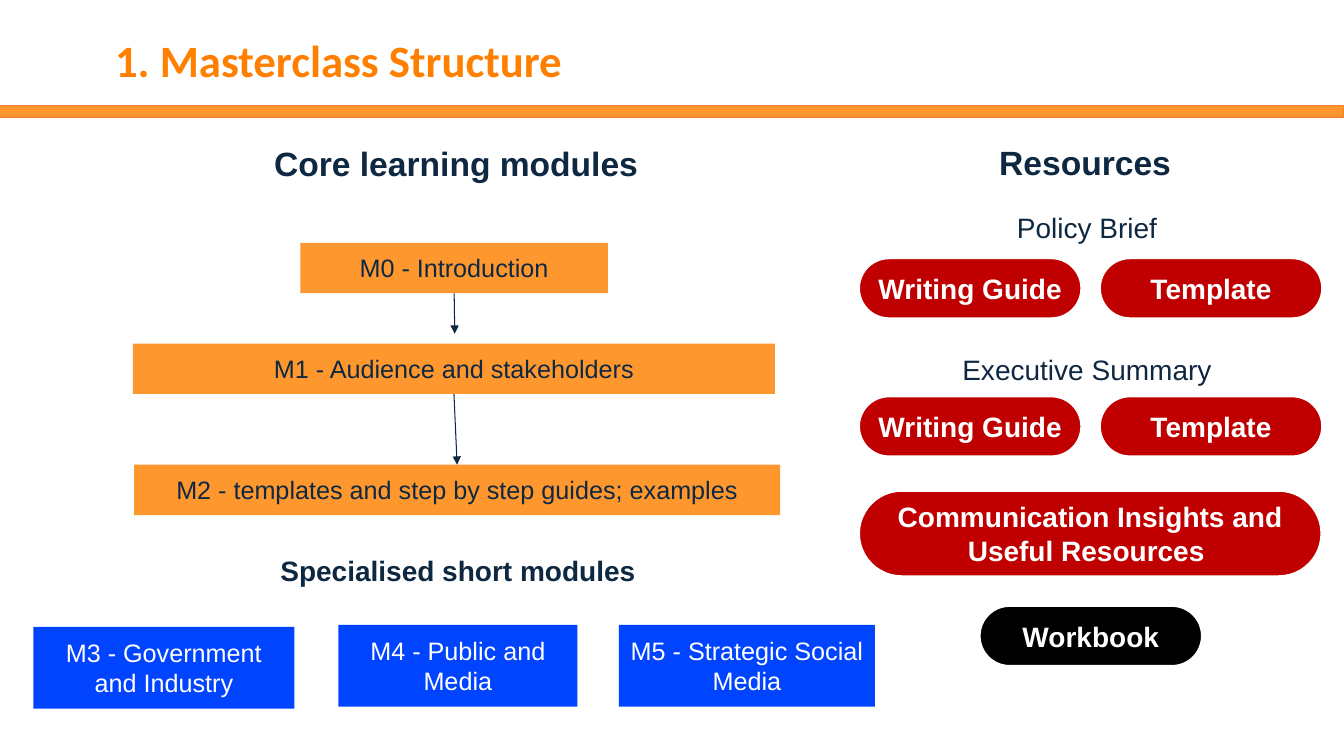
from dataclasses import dataclass

from pptx import Presentation
from pptx.dml.color import RGBColor
from pptx.enum import shapes, text
from pptx.oxml import ns, xmlchemy
from pptx.util import Cm, Pt


@dataclass(frozen=True)
class Theme:
    navy: str = "0E2841"
    orange: str = "FF972F"
    bar_edge: str = "F58234"
    title: str = "FF8001"
    blue: str = "0044FF"
    red: str = "C00000"
    black: str = "000000"
    white: str = "FFFFFF"
    title_font: str = "Calibri"
    font: str = "Arial"
    title_size: int = 32
    head_size: int = 24
    label_size: int = 20
    module_size: int = 18


T = Theme()
RECT = shapes.MSO_SHAPE.RECTANGLE
PILL = shapes.MSO_SHAPE.ROUNDED_RECTANGLE


def write(sp, words, size, color, bold=False, font=T.font, align=text.PP_ALIGN.CENTER):
    tf = sp.text_frame
    tf.word_wrap = True
    p = tf.paragraphs[0]
    p.text = words
    p.alignment = align
    p.font.name = font
    p.font.size = Pt(size)
    p.font.bold = bold
    p.font.color.rgb = RGBColor.from_string(color)
    return tf


def add_block(kind, x, y, w, h, fill, edge=None, edge_width=0.75):
    """Add a filled shape, given in centimetres, with no shadow and equal text margins."""
    sp = s.shapes.add_shape(kind, Cm(x), Cm(y), Cm(w), Cm(h))
    sp.shadow.inherit = False
    sp.fill.solid()
    sp.fill.fore_color.rgb = RGBColor.from_string(fill)
    if edge:
        sp.line.color.rgb = RGBColor.from_string(edge)
        sp.line.width = Pt(edge_width)
    else:
        sp.line.fill.background()
    tf = sp.text_frame
    tf.margin_left = tf.margin_right = tf.margin_top = tf.margin_bottom = Cm(0.25)
    return sp


prs = Presentation()
prs.slide_width, prs.slide_height = Cm(33.87), Cm(19.05)
s = prs.slides.add_slide(prs.slide_layouts[5])

# Title and bar
title = s.shapes.title
title.left, title.top, title.width, title.height = Cm(2.9), Cm(0.86), Cm(26.29), Cm(1.6)
tf = write(title, "1. Masterclass Structure", T.title_size, T.title, True,
           T.title_font, text.PP_ALIGN.LEFT)
tf.margin_left = 0
tf.vertical_anchor = text.MSO_ANCHOR.TOP
tf.auto_size = text.MSO_AUTO_SIZE.NONE
tf.paragraphs[0].line_spacing = 0.9
add_block(RECT, 0, 2.67, 33.87, 0.28, T.orange, T.bar_edge)

# Headings and labels
for words, x, y, h, size, bold in [
    ("Core learning modules", 5.13, 3.48, 1.27, T.head_size, True),
    ("Specialised short modules", 5.18, 13.82, 1.12, T.label_size, True),
    ("Resources", 20.98, 3.45, 1.27, T.head_size, True),
    ("Policy Brief", 21.03, 5.18, 1.12, T.label_size, False),
    ("Executive Summary", 21.03, 8.76, 1.12, T.label_size, False),
]:
    sp = s.shapes.add_textbox(Cm(x), Cm(y), Cm(12.73), Cm(h))
    write(sp, words, size, T.navy, bold).auto_size = text.MSO_AUTO_SIZE.SHAPE_TO_FIT_TEXT

# Modules
modules = []
for words, x, y, w, h, fill, color in [
    ("M0 - Introduction", 7.57, 6.12, 7.75, 1.27, T.orange, T.navy),
    ("M1 - Audience and stakeholders", 3.35, 8.66, 16.18, 1.27, T.orange, T.navy),
    ("M2 - templates and step by step guides; examples",
     3.38, 11.71, 16.28, 1.27, T.orange, T.navy),
    ("M3 - Government and Industry", 0.84, 15.8, 6.58, 2.06, T.blue, T.white),
    ("M4 - Public and Media", 8.53, 15.75, 6.02, 2.06, T.blue, T.white),
    ("M5 - Strategic Social Media", 15.6, 15.75, 6.45, 2.06, T.blue, T.white),
]:
    sp = add_block(RECT, x, y, w, h, fill)
    tf = write(sp, words, T.module_size, color)
    tf.vertical_anchor = text.MSO_ANCHOR.TOP
    tf.auto_size = text.MSO_AUTO_SIZE.SHAPE_TO_FIT_TEXT
    modules.append(sp)

# Arrows down the core modules; the first stops just above M1
m0, m1, m2 = modules[:3]
for start, end, x, y in [(m0, None, 11.46, 8.41), (m1, m2, 11.52, 11.71)]:
    arrow = s.shapes.add_connector(shapes.MSO_CONNECTOR.STRAIGHT, Cm(x), Cm(y), Cm(x), Cm(y))
    arrow.begin_connect(start, 2)
    if end is not None:
        arrow.end_connect(end, 0)
    arrow.line.color.rgb = RGBColor.from_string(T.navy)
    arrow.line.width = Pt(0.75)
    head = xmlchemy.OxmlElement("a:tailEnd")
    head.set("type", "triangle")
    spPr = arrow._element.spPr
    spPr.find(ns.qn("a:ln")).append(head)
    spPr.append(xmlchemy.OxmlElement("a:effectLst"))

# Resource pills
left, right, pill_w, pill_h = 21.62, 27.69, 5.66, 1.57
pills = [
    (words, x, y, pill_w, pill_h, T.red)
    for y in (6.48, 9.96)
    for words, x in (("Writing Guide", left), ("Template", right))
]
pills += [
    ("Communication Insights and Useful Resources ", left, 12.34, 11.71, 2.21, T.red),
    ("Workbook", 24.66, 15.24, pill_w, pill_h, T.black),
]
for words, x, y, w, h, fill in pills:
    sp = add_block(PILL, x, y, w, h, fill, T.white, 3)
    sp.adjustments[0] = 0.5
    write(sp, words, T.label_size, T.white, True).vertical_anchor = text.MSO_ANCHOR.MIDDLE

prs.save("out.pptx")
